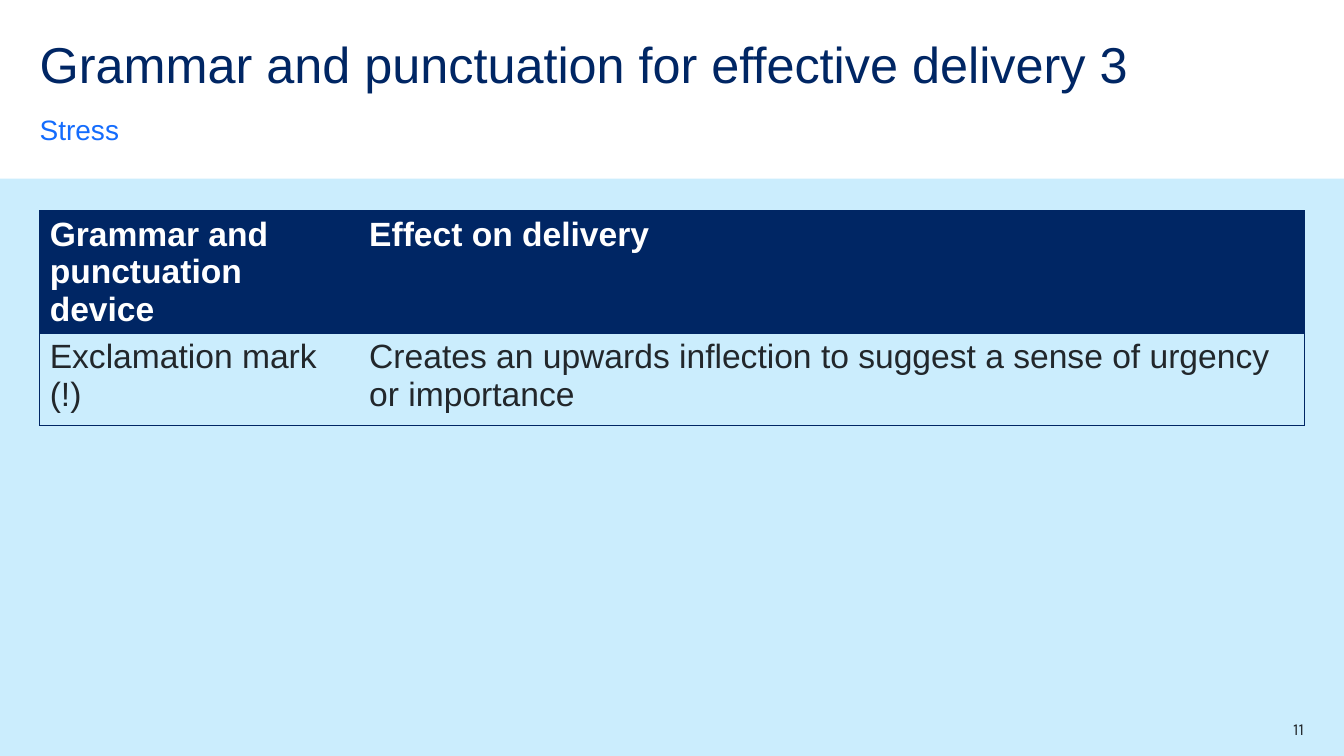
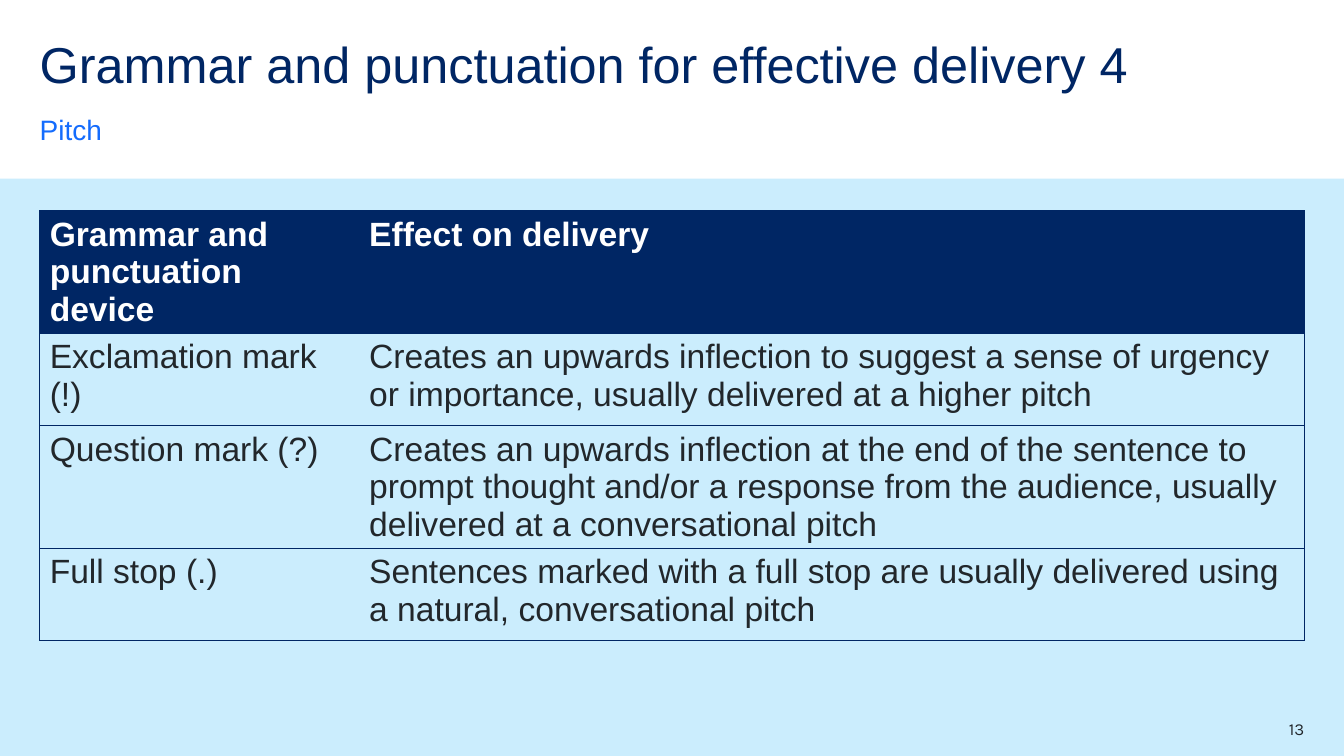
from lxml import etree
from pptx import Presentation
from pptx.dml.color import RGBColor
from pptx.enum.shapes import MSO_SHAPE
from pptx.enum.text import MSO_ANCHOR, MSO_AUTO_SIZE, PP_ALIGN
from pptx.oxml.ns import qn
from pptx.util import Cm, Pt

RECTANGLE = MSO_SHAPE.RECTANGLE
TOP, BOTTOM = MSO_ANCHOR.TOP, MSO_ANCHOR.BOTTOM
NO_AUTOFIT = MSO_AUTO_SIZE.NONE
LEFT, RIGHT = PP_ALIGN.LEFT, PP_ALIGN.RIGHT

NAVY = RGBColor(0x00, 0x26, 0x64)
BLUE = RGBColor(0x14, 0x6C, 0xFD)
PALE_BLUE = RGBColor(0xCB, 0xED, 0xFD)
CHARCOAL = RGBColor(0x22, 0x27, 0x2B)
WHITE = RGBColor(0xFF, 0xFF, 0xFF)

TEXT_FONT = "Arial"
NUMBER_FONT = "Karla"
TITLE_ONLY = 5

SLIDE_WIDTH, SLIDE_HEIGHT = Cm(33.87), Cm(19.05)
MARGIN = Cm(1)
CONTENT_WIDTH = SLIDE_WIDTH - 2 * MARGIN
BAND_TOP = Cm(4.5)
TABLE_TOP = Cm(5.31)
DEVICE_WIDTH = Cm(8.05)
ROW_HEIGHT = Cm(2.33)
NUMBER_WIDTH = Cm(2)
BORDER_WIDTH = Pt(0.5)

HEADINGS = ("Grammar and punctuation device", "Effect on delivery")
LESSONS = [
    ("Grammar and punctuation for effective delivery 3", "Stress", "11", [
        ("Exclamation mark (!)",
         "Creates an upwards inflection to suggest a sense of urgency or importance"),
    ]),
    ("Grammar and punctuation for effective delivery 4", "Pitch", "13", [
        ("Exclamation mark (!)",
         "Creates an upwards inflection to suggest a sense of urgency or importance, "
         "usually delivered at a higher pitch"),
        ("Question mark (?)",
         "Creates an upwards inflection at the end of the sentence to prompt thought "
         "and/or a response from the audience, usually delivered at a conversational pitch"),
        ("Full stop (.)",
         "Sentences marked with a full stop are usually delivered using a natural, "
         "conversational pitch"),
    ]),
]


def write(frame, text, size, color, font=TEXT_FONT, bold=False, align=LEFT):
    paragraph = frame.paragraphs[0]
    paragraph.alignment = align
    run = paragraph.add_run()
    run.text = text
    run.font.name = font
    run.font.size = Pt(size)
    run.font.bold = bold
    run.font.color.rgb = color
    return paragraph


def prepare_frame(frame, anchor):
    frame.margin_left = frame.margin_right = frame.margin_top = frame.margin_bottom = 0
    frame.word_wrap = True
    frame.auto_size = NO_AUTOFIT
    frame.vertical_anchor = anchor
    return frame


def add_text(slide, left, top, width, height, anchor=TOP):
    box = slide.shapes.add_textbox(left, top, width, height)
    return prepare_frame(box.text_frame, anchor)


def add_band(slide):
    band = slide.shapes.add_shape(
        RECTANGLE, 0, BAND_TOP, SLIDE_WIDTH, SLIDE_HEIGHT - BAND_TOP)
    band.shadow.inherit = False
    band.fill.solid()
    band.fill.fore_color.rgb = PALE_BLUE
    band.line.fill.background()


def set_title(slide, text):
    title = slide.shapes.title
    title.left, title.top = MARGIN, MARGIN
    title.width, title.height = Cm(28.5), Cm(1.45)
    frame = prepare_frame(title.text_frame, TOP)
    write(frame, text, 36, NAVY).line_spacing = 0.9


def add_subtitle(slide, text):
    frame = add_text(slide, MARGIN, Cm(2.82), Cm(28), Cm(0.86), BOTTOM)
    paragraph = write(frame, text, 20, BLUE)
    paragraph.line_spacing = 1.5
    paragraph.space_after = Pt(12)


def add_page_number(slide, number):
    frame = add_text(slide, SLIDE_WIDTH - MARGIN - NUMBER_WIDTH, Cm(18.1),
                     NUMBER_WIDTH, Cm(0.5))
    write(frame, number, 12, CHARCOAL, font=NUMBER_FONT, align=RIGHT)


def set_borders(cell, visible_edges):
    properties = cell._tc.get_or_add_tcPr()
    for edge in "LRTB":
        line = etree.SubElement(properties, qn(f"a:ln{edge}"), w=str(BORDER_WIDTH))
        if edge in visible_edges:
            fill = etree.SubElement(line, qn("a:solidFill"))
            etree.SubElement(fill, qn("a:srgbClr"), val=str(NAVY))
        else:
            etree.SubElement(line, qn("a:noFill"))


def format_cell(cell, text, is_heading, outer_edge):
    set_borders(cell, "TB" + outer_edge)
    if is_heading:
        cell.fill.solid()
        cell.fill.fore_color.rgb = NAVY
    else:
        cell.fill.background()
    write(cell.text_frame, text, 24, WHITE if is_heading else CHARCOAL, bold=is_heading)


def add_device_table(slide, devices):
    rows = [HEADINGS, *devices]
    table = slide.shapes.add_table(
        len(rows), len(HEADINGS), MARGIN, TABLE_TOP,
        CONTENT_WIDTH, ROW_HEIGHT * len(rows)).table
    table.horz_banding = False
    table.columns[0].width = DEVICE_WIDTH
    table.columns[1].width = CONTENT_WIDTH - DEVICE_WIDTH
    for row_index, texts in enumerate(rows):
        table.rows[row_index].height = ROW_HEIGHT
        for column_index, (text, outer_edge) in enumerate(zip(texts, "LR")):
            format_cell(table.cell(row_index, column_index), text,
                        row_index == 0, outer_edge)


def add_lesson(presentation, title, subtitle, number, devices):
    slide = presentation.slides.add_slide(presentation.slide_layouts[TITLE_ONLY])
    add_band(slide)
    set_title(slide, title)
    add_subtitle(slide, subtitle)
    add_device_table(slide, devices)
    add_page_number(slide, number)


def main():
    presentation = Presentation()
    presentation.slide_width = SLIDE_WIDTH
    presentation.slide_height = SLIDE_HEIGHT
    for lesson in LESSONS:
        add_lesson(presentation, *lesson)
    presentation.save("out.pptx")


if __name__ == "__main__":
    main()
